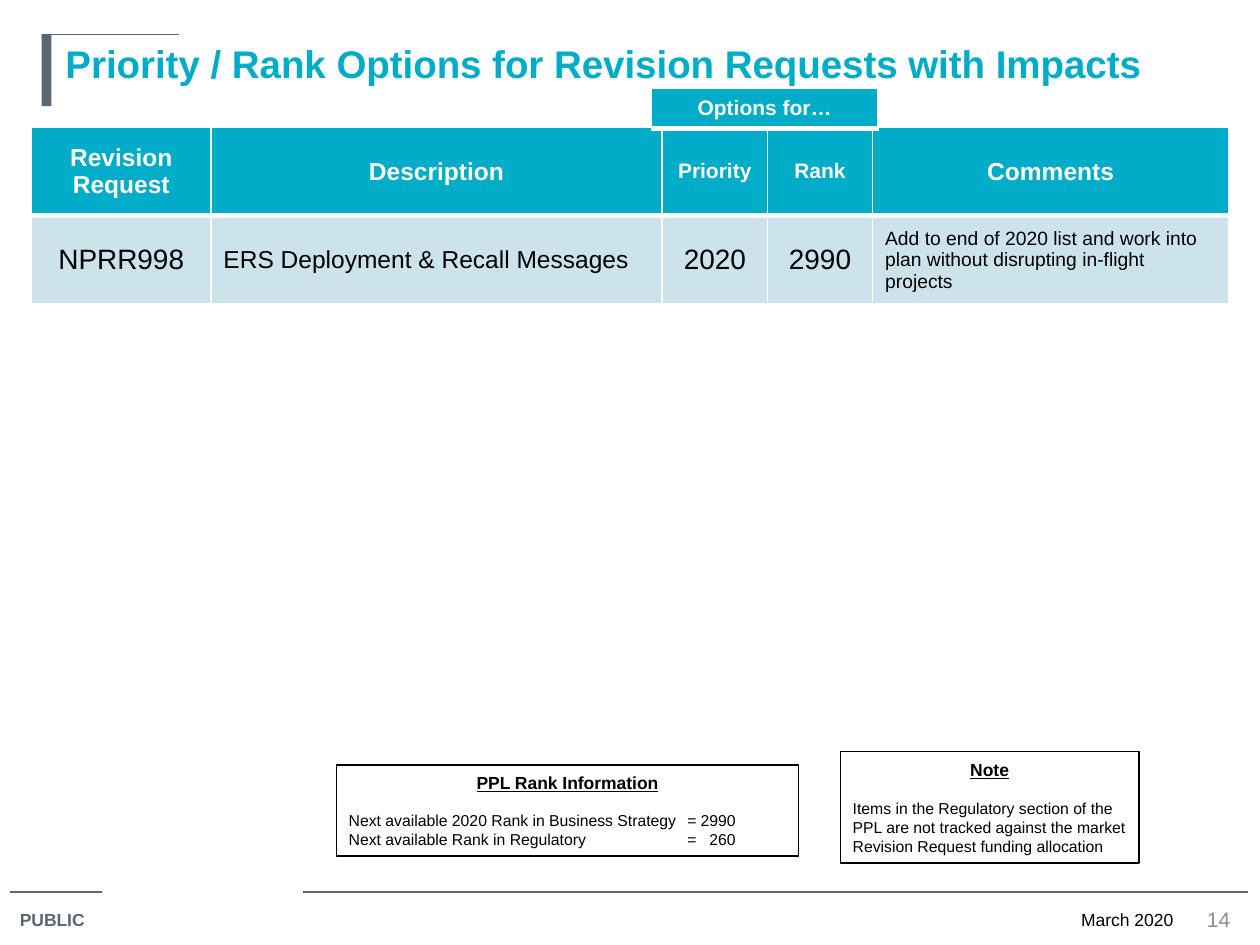
from lxml.etree import SubElement
from pptx import Presentation
from pptx.dml.color import RGBColor
from pptx.enum.shapes import MSO_CONNECTOR as CONN, MSO_SHAPE as SHAPE
from pptx.enum.text import MSO_ANCHOR as ANCHOR, PP_ALIGN as ALIGN
from pptx.oxml.ns import qn
from pptx.util import Cm, Pt

TEAL, PALE, GRAY = "00ACC8", "CCE3EB", "5B6770"
WHITE, BLACK, SILVER = "FFFFFF", "000000", "8C8C8C"
L, C, R = ALIGN.LEFT, ALIGN.CENTER, ALIGN.RIGHT

RULES = [(0.2, 17.98, 1.85), (6.1, 17.98, 19.05), (0.84, 0.69, 2.77)]
LABELS = [
    ("PUBLIC", (0.15, 18.21, 1.96, 0.71), 10, GRAY, True, L, ANCHOR.TOP),
    ("March 2020", (20.52, 18.21, 3.38, 0.61), 10, BLACK, False, R, ANCHOR.TOP),
    ("Priority / Rank Options for Revision Requests with Impacts",
     (1.07, 0.69, 22.86, 1.45), 22, TEAL, True, L, ANCHOR.TOP),
    ("14", (23.93, 18.24, 1.27, 0.58), 12, SILVER, False, C, ANCHOR.MIDDLE),
]
COLUMNS = [3.61, 9.1, 2.12, 2.12, 7.18]
HEADERS = [("Revision Request", 14, C), ("Description", 14, C),
           ("Priority", 12, C), ("Rank", 12, C), ("Comments", 14, C)]
REQUESTS = [
    [("NPRR998", 16, C), ("ERS Deployment & Recall Messages", 14, L),
     ("2020", 16, C), ("2990", 16, C),
     ("Add to end of 2020 list and work into plan without disrupting "
      "in-flight projects", 11, L)],
]
BOXES = [
    ("PPL Rank Information", (6.78, 15.42, 9.32, 1.84),
     ["Next available 2020 Rank in Business Strategy\t=\t2990",
      "Next available Rank in Regulatory\t=\t260"]),
    ("Note", (16.94, 15.15, 6.02, 2.25),
     ["Items in the Regulatory section of the PPL are not tracked against "
      "the market Revision Request funding allocation"]),
]
TABS = [(6.83, "l"), (7.8, "r")]


def rgb(value):
    return RGBColor.from_string(value)


def place(box):
    return [Cm(v) for v in box]


def add_run(p, text, size, color, bold=False, underline=False):
    r = p.add_run()
    r.text = text
    r.font.name, r.font.size = "Arial", Pt(size)
    r.font.bold, r.font.underline = bold, underline
    r.font.color.rgb = rgb(color)


def add_rect(s, box, fill, line=None):
    sp = s.shapes.add_shape(SHAPE.RECTANGLE, *place(box))
    sp.shadow.inherit = False
    sp.fill.solid()
    sp.fill.fore_color.rgb = rgb(fill)
    if line:
        sp.line.color.rgb = rgb(line)
        sp.line.width = Pt(0.75)
    else:
        sp.line.fill.background()
    return sp


def add_rule(s, x, y, width):
    ln = s.shapes.add_connector(CONN.STRAIGHT, *place((x, y, x + width, y)))
    ln.line.color.rgb = rgb(GRAY)
    ln.line.width = Pt(0.75)
    SubElement(ln._element.spPr, qn("a:effectLst"))


def add_label(s, text, box, size, color, bold, align, anchor):
    tf = s.shapes.add_textbox(*place(box)).text_frame
    tf.word_wrap, tf.vertical_anchor = True, anchor
    tf.paragraphs[0].alignment = align
    add_run(tf.paragraphs[0], text, size, color, bold)


def add_borders(cell, **widths):
    tc_pr = cell._tc.get_or_add_tcPr()
    for side in "LRTB":
        ln = SubElement(tc_pr, qn(f"a:ln{side}"), w=str(Pt(widths.get(side, 1))))
        fill = SubElement(ln, qn("a:solidFill"))
        SubElement(fill, qn("a:srgbClr"), val=WHITE)


def add_grid(s, x, y, columns, height, rows):
    frame = s.shapes.add_table(len(rows), len(columns), Cm(x), Cm(y),
                               Cm(sum(columns)), Cm(height * len(rows)))
    table = frame.table
    for column, width in zip(table.columns, columns):
        column.width = Cm(width)
    for i, row in enumerate(rows):
        table.rows[i].height = Cm(height)
        head = i == 0
        for j, (text, size, align) in enumerate(row):
            cell = table.cell(i, j)
            add_borders(cell, **({"B": 3} if head else {"T": 3 if i == 1 else 1}))
            cell.fill.solid()
            cell.fill.fore_color.rgb = rgb(TEAL if head else PALE)
            cell.vertical_anchor = ANCHOR.MIDDLE
            p = cell.text_frame.paragraphs[0]
            p.alignment = align
            add_run(p, text, size, WHITE if head else BLACK, head)


def add_tabs(p):
    tabs = SubElement(p._p.get_or_add_pPr(), qn("a:tabLst"))
    for pos, align in TABS:
        SubElement(tabs, qn("a:tab"), pos=str(Cm(pos)), algn=align)


def add_box(s, heading, box, lines):
    tf = add_rect(s, box, WHITE, BLACK).text_frame
    tf.word_wrap, tf.vertical_anchor = True, ANCHOR.MIDDLE
    p = tf.paragraphs[0]
    p.alignment = C
    add_run(p, heading, 10, BLACK, True, True)
    for i, text in enumerate(lines):
        p = tf.add_paragraph()
        p.alignment = L
        p.space_before = Pt(0 if i else 10.4)
        if "\t" in text:
            add_tabs(p)
        add_run(p, text, 9, BLACK)


def main():
    prs = Presentation()
    prs.slide_width, prs.slide_height = Cm(25.4), Cm(19.05)
    s = prs.slides.add_slide(prs.slide_layouts[6])
    for rule in RULES:
        add_rule(s, *rule)
    add_rect(s, (0.84, 0.69, 0.2, 1.45), GRAY)
    for label in LABELS:
        add_label(s, *label)
    add_grid(s, 0.64, 2.57, COLUMNS, 1.78, [HEADERS] + REQUESTS)
    add_grid(s, 13.13, 1.78, [4.57], 0.81, [[("Options for…", 12, C)]])
    for box in BOXES:
        add_box(s, *box)
    prs.save("out.pptx")


if __name__ == "__main__":
    main()
